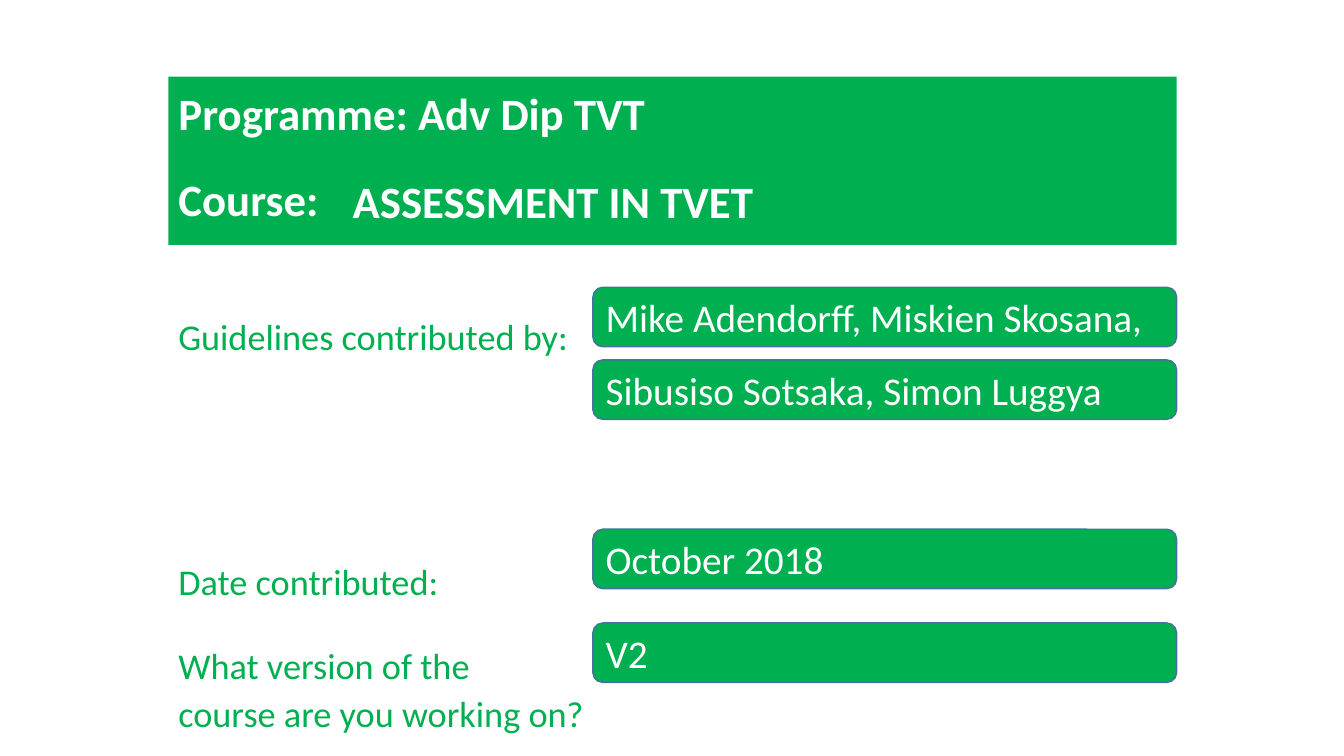
"""Build the cover slide of the course guidelines."""
from dataclasses import dataclass

from pptx import Presentation
from pptx.dml.color import RGBColor
from pptx.enum.shapes import MSO_SHAPE as Preset
from pptx.enum.text import MSO_ANCHOR as Anchor, MSO_AUTO_SIZE as AutoSize, PP_ALIGN as Align
from pptx.shapes.autoshape import Shape
from pptx.slide import Slide
from pptx.util import Inches, Pt


@dataclass(frozen=True)
class Theme:
    font: str = "Calibri"
    green: RGBColor = RGBColor(0x00, 0xB0, 0x50)
    white: RGBColor = RGBColor(0xFF, 0xFF, 0xFF)
    outline: RGBColor = RGBColor(0x43, 0x73, 0x9E)
    heading: float = 32
    answer: float = 28
    label: float = 25.9


@dataclass(frozen=True)
class Line:
    text: str
    before: float = 0


@dataclass(frozen=True)
class Answer:
    text: str
    top: float


THEME = Theme()
LEFT, WIDTH = 1.67, 10
ANSWER_LEFT, ANSWER_WIDTH, ANSWER_HEIGHT = 5.88, 5.79, 0.59

HEADING = [Line("Programme: Adv Dip TVT"), Line("Course:", before=31)]
LABELS = [
    Line("Guidelines contributed by:"),
    Line("Date contributed:", before=150),
    Line("What version of the", before=35),
    Line("course are you working on?", before=10),
]
ANSWERS = [
    Answer("Mike Adendorff, Miskien Skosana,", 2.85),
    Answer("Sibusiso Sotsaka, Simon Luggya", 3.57),
    Answer("October 2018", 5.25),
    Answer("V2", 6.18),
]


def write(shape: Shape, lines: list[Line], *, size: float, color: RGBColor,
          bold: bool = False, spacing: float = 1.0, anchor: Anchor = Anchor.TOP) -> None:
    frame = shape.text_frame
    frame.word_wrap = True
    frame.auto_size = AutoSize.NONE
    frame.vertical_anchor = anchor
    for index, line in enumerate(lines):
        para = frame.add_paragraph() if index else frame.paragraphs[0]
        para.alignment = Align.LEFT
        para.line_spacing = spacing
        para.space_before = Pt(line.before)
        span = para.add_run()
        span.text = line.text
        span.font.name = THEME.font
        span.font.size = Pt(size)
        span.font.bold = bold
        span.font.color.rgb = color


def add_heading(page: Slide) -> None:
    title = page.shapes.title
    title.left, title.top = Inches(LEFT), Inches(0.76)
    title.width, title.height = Inches(WIDTH), Inches(1.67)
    title.fill.solid()
    title.fill.fore_color.rgb = THEME.green
    write(title, HEADING, size=THEME.heading, color=THEME.white, bold=True,
          spacing=0.8, anchor=Anchor.MIDDLE)


def add_text(page: Slide, left: float, top: float, width: float, height: float) -> Shape:
    return page.shapes.add_textbox(Inches(left), Inches(top), Inches(width), Inches(height))


def add_answer(page: Slide, answer: Answer) -> None:
    box = page.shapes.add_shape(
        Preset.ROUNDED_RECTANGLE, Inches(ANSWER_LEFT), Inches(answer.top),
        Inches(ANSWER_WIDTH), Inches(ANSWER_HEIGHT))
    box.shadow.inherit = False
    box.fill.solid()
    box.fill.fore_color.rgb = THEME.green
    box.line.color.rgb = THEME.outline
    box.line.width = Pt(1)
    write(box, [Line(answer.text)], size=THEME.answer, color=THEME.white, anchor=Anchor.MIDDLE)


def main() -> None:
    deck = Presentation()
    deck.slide_width, deck.slide_height = Inches(13.33), Inches(7.5)
    page = deck.slides.add_slide(deck.slide_layouts.get_by_name("Title Only"))
    add_heading(page)
    labels = add_text(page, LEFT, 3.15, WIDTH, 4.26)
    write(labels, LABELS, size=THEME.label, color=THEME.green, spacing=0.8)
    course = add_text(page, 3.4, 1.67, 6.77, 0.64)
    write(course, [Line("ASSESSMENT IN TVET")], size=THEME.heading, color=THEME.white, bold=True)
    for answer in ANSWERS:
        add_answer(page, answer)
    deck.save("out.pptx")


if __name__ == "__main__":
    main()
